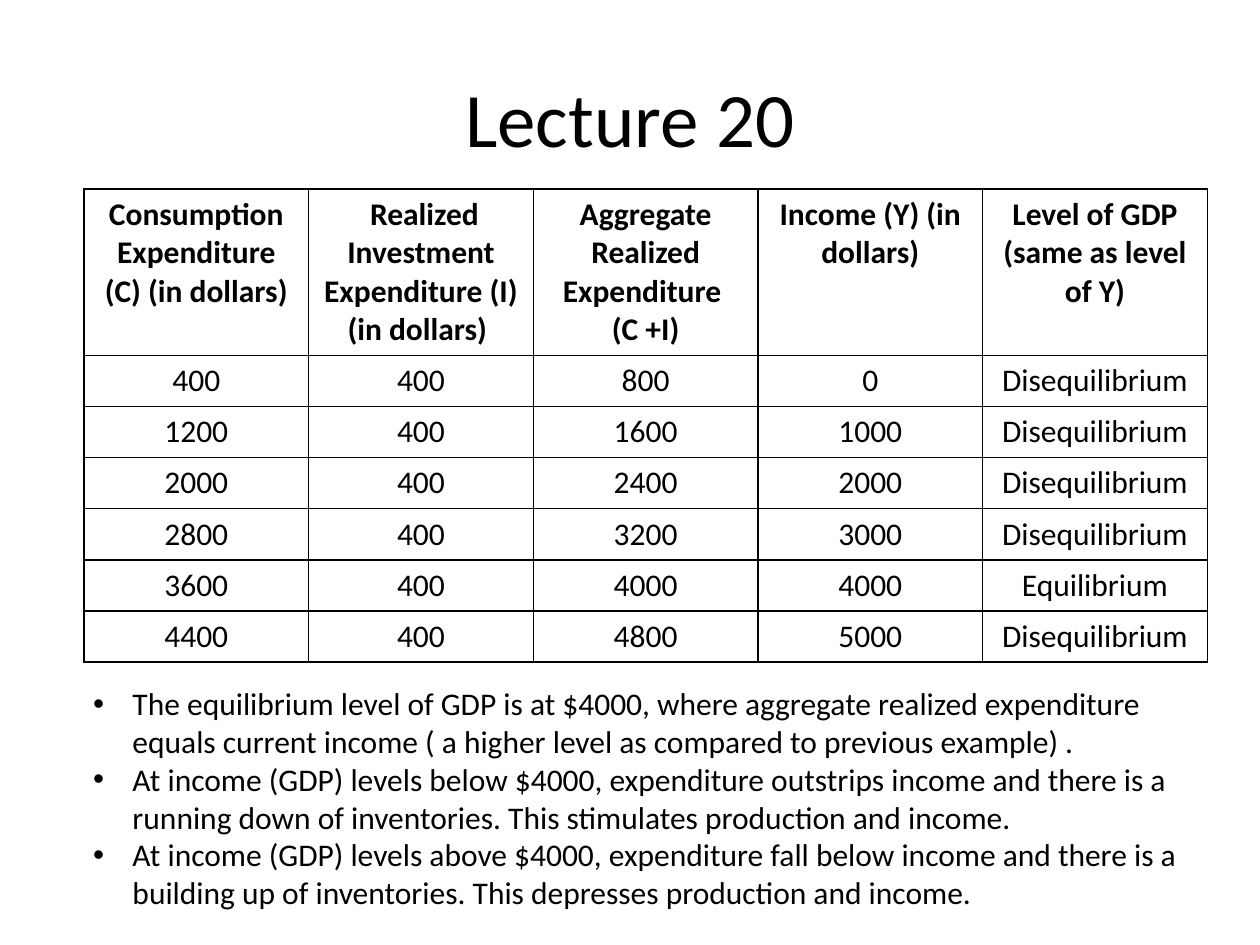
from lxml import etree
from pptx import Presentation
from pptx.dml.color import RGBColor
from pptx.enum.text import MSO_ANCHOR, MSO_AUTO_SIZE, PP_ALIGN
from pptx.oxml.ns import qn
from pptx.util import Pt

BLACK = RGBColor(0x00, 0x00, 0x00)
FONT_NAME = "Calibri"
CENTER = PP_ALIGN.CENTER
LEFT = PP_ALIGN.LEFT
TOP = MSO_ANCHOR.TOP
MIDDLE = MSO_ANCHOR.MIDDLE
NO_AUTOFIT = MSO_AUTO_SIZE.NONE
TITLE_AND_CONTENT = 1

TITLE_SIZE = Pt(44)
TEXT_SIZE = Pt(18)
BORDER_WIDTH = Pt(1)
COLUMN_WIDTH = Pt(128.4)
HEADER_HEIGHT = Pt(90.72)
ROW_HEIGHT = Pt(28.08)
BULLET_INDENT = Pt(22.5)

HEADERS = [
    "Consumption Expenditure (C) (in dollars)",
    " Realized Investment Expenditure (I) (in dollars) ",
    "Aggregate Realized Expenditure \n(C +I)",
    "Income (Y) (in dollars)",
    "Level of GDP (same as level of Y)",
]
ROWS = [
    ("400", "400", "800", "0", "Disequilibrium"),
    ("1200", "400", "1600", "1000", "Disequilibrium"),
    ("2000", "400", "2400", "2000", "Disequilibrium"),
    ("2800", "400", "3200", "3000", "Disequilibrium"),
    ("3600", "400", "4000", "4000", "Equilibrium"),
    ("4400", "400", "4800", "5000", "Disequilibrium"),
]
CONCLUSIONS = [
    "The equilibrium level of GDP is at $4000, where aggregate realized expenditure "
    "equals current income ( a higher level as compared to previous example) .",
    "At income (GDP) levels below $4000, expenditure outstrips income and there is a "
    "running down of inventories. This stimulates production and income.",
    "At income (GDP) levels above $4000, expenditure fall below income and there is a "
    "building up of inventories. This depresses production and income.",
]


def place(shape, left, top, width, height):
    shape.left, shape.top = Pt(left), Pt(top)
    shape.width, shape.height = Pt(width), Pt(height)


def write_paragraphs(text_frame, texts, size, alignment, bold=False):
    for index, text in enumerate(texts):
        paragraph = text_frame.paragraphs[0] if index == 0 else text_frame.add_paragraph()
        paragraph.alignment = alignment
        paragraph.space_before = Pt(0)
        run = paragraph.add_run()
        run.text = text
        run.font.name = FONT_NAME
        run.font.size = size
        run.font.bold = bold
        run.font.color.rgb = BLACK


def add_borders(cell):
    properties = cell._tc.get_or_add_tcPr()
    for side in ("a:lnL", "a:lnR", "a:lnT", "a:lnB"):
        line = etree.SubElement(properties, qn(side), w=str(BORDER_WIDTH))
        fill = etree.SubElement(line, qn("a:solidFill"))
        etree.SubElement(fill, qn("a:srgbClr"), val=str(BLACK))


def fill_title(title):
    place(title, 36, 21.6, 648, 90)
    title.text_frame.vertical_anchor = MIDDLE
    write_paragraphs(title.text_frame, ["Lecture 20"], TITLE_SIZE, CENTER)


def add_expenditure_table(slide):
    all_rows = [HEADERS, *ROWS]
    frame = slide.shapes.add_table(
        len(all_rows), len(HEADERS), Pt(48), Pt(108),
        COLUMN_WIDTH * len(HEADERS), HEADER_HEIGHT + ROW_HEIGHT * len(ROWS))
    table = frame.table
    table.first_row = False
    table.horz_banding = False
    for column in table.columns:
        column.width = COLUMN_WIDTH
    for row_index, values in enumerate(all_rows):
        is_header = row_index == 0
        table.rows[row_index].height = HEADER_HEIGHT if is_header else ROW_HEIGHT
        for column_index, value in enumerate(values):
            cell = table.cell(row_index, column_index)
            add_borders(cell)
            cell.fill.background()
            write_paragraphs(cell.text_frame, value.split("\n"), TEXT_SIZE, CENTER, is_header)


def fill_conclusions(body):
    place(body, 46, 387.4, 643.7, 138.2)
    text_frame = body.text_frame
    text_frame.word_wrap = True
    text_frame.auto_size = NO_AUTOFIT
    text_frame.vertical_anchor = TOP
    write_paragraphs(text_frame, CONCLUSIONS, TEXT_SIZE, LEFT)
    for paragraph in text_frame.paragraphs:
        properties = paragraph._p.get_or_add_pPr()
        properties.set("marL", str(BULLET_INDENT))
        properties.set("indent", str(-BULLET_INDENT))
        etree.SubElement(properties, qn("a:buFont"), typeface="Arial")
        etree.SubElement(properties, qn("a:buChar"), char="•")


def main():
    presentation = Presentation()
    presentation.slide_width, presentation.slide_height = Pt(720), Pt(540)
    slide = presentation.slides.add_slide(presentation.slide_layouts[TITLE_AND_CONTENT])
    fill_title(slide.shapes.title)
    add_expenditure_table(slide)
    fill_conclusions(slide.placeholders[1])
    presentation.save("out.pptx")


if __name__ == "__main__":
    main()
